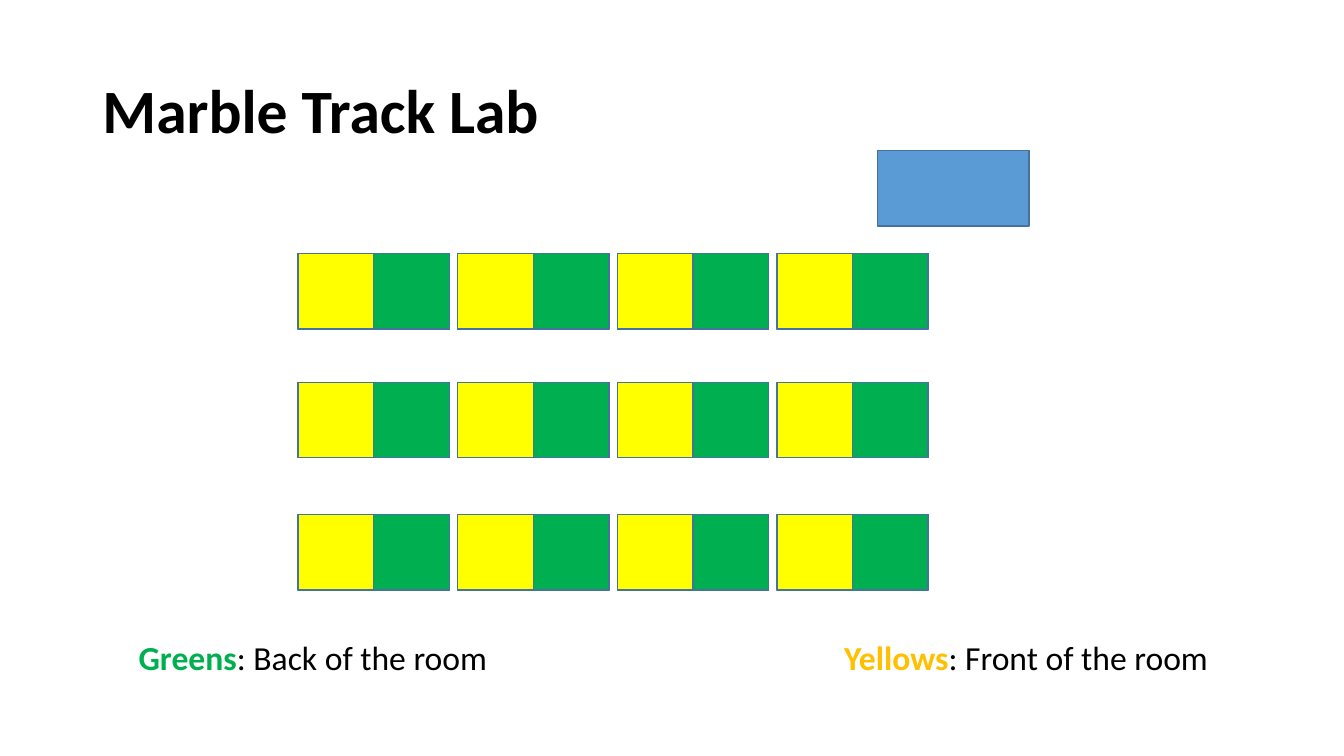
from dataclasses import dataclass
from itertools import product

from lxml.etree import SubElement
from pptx import Presentation
from pptx.dml.color import RGBColor as RGB
from pptx.enum.shapes import MSO_SHAPE as Shape
from pptx.enum.text import MSO_ANCHOR as Anchor, PP_ALIGN as Align
from pptx.oxml.ns import qn
from pptx.util import Pt

# Content
TITLE = "Marble Track Lab"
LEGEND = [
    ("Greens", "green_text", ": Back of the room\t"),
    ("Yellows", "yellow_text", ": Front of the room"),
]
SEAT_COLORS = ["yellow", "green"]  # left to right at each desk


@dataclass(frozen=True)
class Theme:
    font: str = "Calibri"
    title_size: int = 44
    legend_size: int = 24
    text: str = "000000"
    desk: str = "5B9BD5"
    outline: str = "43739E"
    yellow: str = "FFFF00"
    green: str = "00B050"
    green_text: str = "00B050"
    yellow_text: str = "FFC000"


theme = Theme()

# Room plan, in points
SEAT = 54
DESK_WIDTH = 2 * SEAT
DESK_LEFTS = [213 + 114 * column for column in range(4)]
ROW_TOPS = [181, 273, 367.5]
TEACHER_DESK = (627, 107.5)
YELLOWS_TAB = 504

deck = Presentation()
deck.slide_width, deck.slide_height = Pt(960), Pt(540)
slide = deck.slides.add_slide(deck.slide_layouts[5])


def add_text(paragraph, text, *, size, color=theme.text, bold=False):
    run = paragraph.add_run()
    run.text = text
    run.font.name, run.font.size, run.font.bold = theme.font, Pt(size), bold
    run.font.color.rgb = RGB.from_string(color)


def add_block(left, top, width, color):
    block = slide.shapes.add_shape(
        Shape.RECTANGLE, Pt(left), Pt(top), Pt(width), Pt(SEAT))
    block.shadow.inherit = False
    block.fill.solid()
    block.fill.fore_color.rgb = RGB.from_string(color)
    block.line.color.rgb = RGB.from_string(theme.outline)
    block.line.width = Pt(1)


# Title
title = slide.shapes.title
title.left, title.top, title.width, title.height = Pt(66), Pt(29), Pt(828), Pt(104)
title.text_frame.vertical_anchor = Anchor.MIDDLE
heading = title.text_frame.paragraphs[0]
heading.alignment, heading.line_spacing = Align.LEFT, 0.9
add_text(heading, TITLE, size=theme.title_size, bold=True)

# Desks, each with a yellow and a green seat
add_block(*TEACHER_DESK, DESK_WIDTH, theme.desk)
for top, left in product(ROW_TOPS, DESK_LEFTS):
    add_block(left, top, DESK_WIDTH, theme.desk)
    for seat, color in enumerate(SEAT_COLORS):
        add_block(left + seat * SEAT, top, SEAT, getattr(theme, color))

# Legend: the second entry starts at a tab stop
legend = slide.shapes.add_textbox(Pt(30), Pt(451.5), Pt(902), Pt(36)).text_frame
legend.word_wrap = True
legend.margin_left = Pt(69)
entries = legend.paragraphs[0]
entries.alignment = Align.LEFT
tab_stops = SubElement(entries._p.get_or_add_pPr(), qn("a:tabLst"))
SubElement(tab_stops, qn("a:tab"), pos=str(Pt(YELLOWS_TAB)), algn="l")
for group, color, place in LEGEND:
    add_text(entries, group, size=theme.legend_size,
             color=getattr(theme, color), bold=True)
    add_text(entries, place, size=theme.legend_size)

deck.save("out.pptx")
